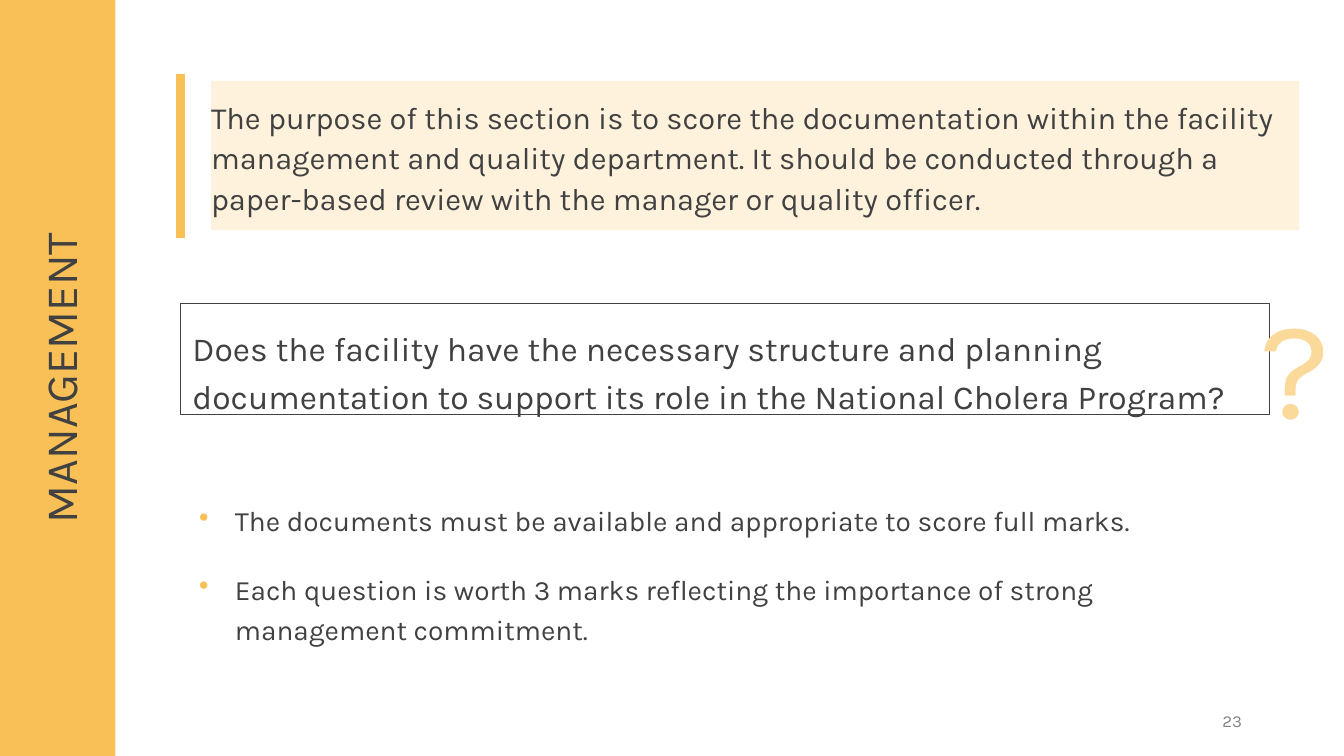
import dataclasses

import lxml.etree
import pptx
import pptx.dml.color
import pptx.enum.shapes
import pptx.enum.text
import pptx.oxml.ns
import pptx.util

Cm, Pt = pptx.util.Cm, pptx.util.Pt
ALIGN = pptx.enum.text.PP_ALIGN
ANCHOR = pptx.enum.text.MSO_ANCHOR
qn = pptx.oxml.ns.qn


@dataclasses.dataclass(frozen=True)
class Theme:
    font: str = "Karla"
    accent: str = "F8C056"
    accent_mid: str = "FBD99A"
    accent_pale: str = "FEF2DD"
    ink: str = "414141"
    grey: str = "838383"
    number: int = 12
    bullet: int = 20
    purpose: int = 22
    question: int = 24
    section: int = 32
    mark: int = 100


def rgb(value):
    return pptx.dml.color.RGBColor.from_string(value)


def set_indent(p, left, first=0, bullet=None, bullet_color=None):
    """Set left margin and first-line indent in cm, with an optional bullet."""
    pPr = p._p.get_or_add_pPr()
    pPr.set("marL", str(Cm(left)))
    pPr.set("indent", str(Cm(first)))
    if bullet:
        clr = lxml.etree.SubElement(pPr, qn("a:buClr"))
        lxml.etree.SubElement(clr, qn("a:srgbClr"), val=bullet_color)
        lxml.etree.SubElement(pPr, qn("a:buChar"), char=bullet)


def add_text(tf, *texts, font, size, color, align=ALIGN.LEFT, anchor=ANCHOR.TOP,
             spacing=1.0, after=0, insets=(0.25, 0.13, 0.25, 0.13), indent=None):
    """Add one paragraph per text; insets are left, top, right, bottom in cm."""
    tf.word_wrap = True
    tf.vertical_anchor = anchor
    tf.margin_left, tf.margin_top, tf.margin_right, tf.margin_bottom = map(Cm, insets)
    for i, text in enumerate(texts):
        p = tf.add_paragraph() if i else tf.paragraphs[0]
        p.alignment = align
        p.line_spacing = spacing
        p.space_after = Pt(after)
        if indent:
            set_indent(p, **indent)
        r = p.add_run()
        r.text = text
        r.font.name = font
        r.font.size = Pt(size)
        r.font.color.rgb = rgb(color)


class SlideBuilder:
    def __init__(self, slide, theme):
        self.s = slide
        self.theme = theme

    def text(self, box, *texts, rotation=0, **fmt):
        sp = self.s.shapes.add_textbox(*map(Cm, box))
        sp.rotation = rotation
        self.fill_text(sp, *texts, **fmt)

    def rect(self, box, *texts, fill=None, line=None, line_width=0.5, **fmt):
        sp = self.s.shapes.add_shape(
            pptx.enum.shapes.MSO_SHAPE.RECTANGLE, *map(Cm, box))
        sp.shadow.inherit = False
        if fill:
            sp.fill.solid()
            sp.fill.fore_color.rgb = rgb(fill)
        else:
            sp.fill.background()
        if line:
            sp.line.color.rgb = rgb(line)
            sp.line.width = Pt(line_width)
        else:
            sp.line.fill.background()
        if texts:
            self.fill_text(sp, *texts, **fmt)

    def line(self, x1, y1, x2, y2, color, width):
        cx = self.s.shapes.add_connector(
            pptx.enum.shapes.MSO_CONNECTOR.STRAIGHT, *map(Cm, (x1, y1, x2, y2)))
        cx.line.color.rgb = rgb(color)
        cx.line.width = Pt(width)
        lxml.etree.SubElement(cx._element.spPr, qn("a:effectLst"))

    def fill_text(self, sp, *texts, **fmt):
        """Add text in the theme's font and ink unless fmt says otherwise."""
        add_text(sp.text_frame, *texts,
                 **{"font": self.theme.font, "color": self.theme.ink, **fmt})


def main():
    prs = pptx.Presentation()
    prs.slide_width, prs.slide_height = Cm(33.87), Cm(19.05)
    t = Theme()
    b = SlideBuilder(prs.slides.add_slide(prs.slide_layouts[6]), t)

    b.rect((0, 0, 2.91, 19.05), fill=t.accent)
    b.text((-7.7, 8.56, 19.05, 1.93), "MANAGEMENT", rotation=270,
           size=t.section, align=ALIGN.CENTER, spacing=0.9)

    b.rect((5.32, 2.04, 27.43, 3.76),
           "The purpose of this section is to score the documentation within the "
           "facility management and quality department. It should be conducted "
           "through a paper-based review with the manager or quality officer.",
           fill=t.accent_pale, size=t.purpose, anchor=ANCHOR.MIDDLE,
           spacing=1.1, after=12, insets=(0, 0, 0, 0))
    b.line(4.55, 1.86, 4.55, 6, t.accent, 6)

    b.rect((4.55, 7.65, 27.43, 2.8),
           "Does the facility have the necessary structure and planning "
           "documentation to support its role in the National Cholera Program?",
           line=t.ink, size=t.question, spacing=1.2, after=20,
           insets=(0.2, 0.4, 0.4, 0.3), indent={"left": 0.1})
    b.text((31.52, 6.9, 1.55, 4.52), "?", size=t.mark, color=t.accent_mid,
           align=ALIGN.CENTER)

    b.text((4.67, 12.4, 27.3, 3.96),
           "The documents must be available and appropriate to score full marks.",
           "Each question is worth 3 marks reflecting the importance of strong "
           "management commitment.",
           size=t.bullet, spacing=1.2, after=20,
           indent={"left": 1, "first": -0.9, "bullet": "•", "bullet_color": t.accent})
    b.text((23.93, 17.65, 7.62, 1.02), "23", size=t.number, color=t.grey,
           align=ALIGN.RIGHT, anchor=ANCHOR.MIDDLE)

    prs.save("out.pptx")


if __name__ == "__main__":
    main()
